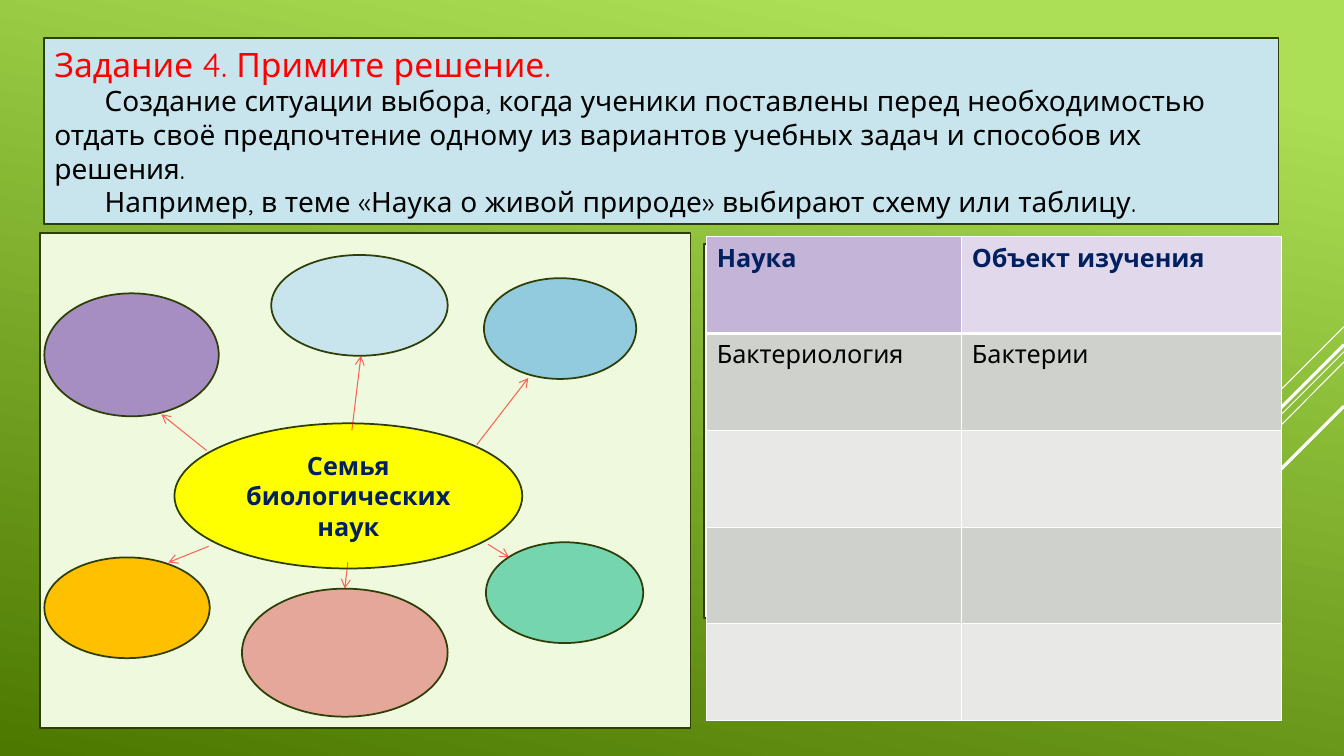
import pptx
import pptx.util
import pptx.dml.color
import pptx.enum.shapes
import pptx.enum.text
import pptx.oxml.ns
import lxml.etree

Inches = pptx.util.Inches
Pt = pptx.util.Pt
RGB = pptx.dml.color.RGBColor
MSO = pptx.enum.shapes.MSO_SHAPE
ALIGN = pptx.enum.text.PP_ALIGN
ANCHOR = pptx.enum.text.MSO_ANCHOR
qn = pptx.oxml.ns.qn

WHITE = RGB(0xFF, 0xFF, 0xFF)
BLACK = RGB(0x00, 0x00, 0x00)
RED = RGB(0xFF, 0x00, 0x00)
NAVY = RGB(0x00, 0x20, 0x60)
OUTLINE = RGB(0x2E, 0x3E, 0x07)
LIME = RGB(0xAC, 0xDF, 0x55)
DARK_GREEN = RGB(0x4C, 0x78, 0x00)
PALE_BLUE = RGB(0xC8, 0xE5, 0xEE)
PALE_GREEN = RGB(0xEE, 0xF9, 0xDD)
PURPLE = RGB(0xA6, 0x8E, 0xC3)
MINT = RGB(0x75, 0xD5, 0xAE)
SKY = RGB(0x91, 0xCB, 0xDD)
ORANGE = RGB(0xFF, 0xC0, 0x00)
YELLOW = RGB(0xFF, 0xFF, 0x00)
PINK = RGB(0xE5, 0xA7, 0x99)
LILAC = RGB(0xC4, 0xB4, 0xD7)
PALE_LILAC = RGB(0xE1, 0xD9, 0xEB)
GREY = RGB(0xCE, 0xD1, 0xCC)
PALE_GREY = RGB(0xE8, 0xE9, 0xE7)

prs = pptx.Presentation()
prs.slide_width = Inches(13.33)
prs.slide_height = Inches(7.5)
s = prs.slides.add_slide(prs.slide_layouts[6])

bg = s.background.fill
bg.gradient()
bg.gradient_angle = 258
for stop, position, color in zip(bg.gradient_stops, (0.1, 1), (LIME, DARK_GREEN)):
    stop.position = position
    stop.color.rgb = color


def add_line(x1, y1, x2, y2, color, width):
    ln = s.shapes.add_connector(
        pptx.enum.shapes.MSO_CONNECTOR.STRAIGHT,
        Inches(x1), Inches(y1), Inches(x2), Inches(y2))
    ln.line.color.rgb = color
    ln.line.width = Pt(width)
    lxml.etree.SubElement(ln._element.spPr, qn("a:effectLst"))
    return ln


def add_run(p, text, size, color, bold=False):
    r = p.add_run()
    r.text = text
    r.font.name = "Quicksand"
    r.font.size = Pt(size)
    r.font.bold = bold
    r.font.color.rgb = color


for y1, x2, y2, width in [
    (3.24, 12.33, 4.24, 0.75),
    (3.49, 10.07, 6.75, 0.75),
    (3.59, 11.26, 5.67, 0.75),
    (3.42, 11.42, 5.33, 2.25),
    (4.03, 11.94, 5.42, 2.25),
]:
    add_line(13.33, y1, x2, y2, WHITE, width)

task = [
    ("Задание 4. Примите решение.", 24, RED, 0),
    ("Создание ситуации выбора, когда ученики поставлены перед необходимостью "
     "отдать своё предпочтение одному из вариантов учебных задач и способов их решения.",
     20, BLACK, 0.5),
    ("Например, в теме «Наука о живой природе» выбирают схему или таблицу.",
     20, BLACK, 0.5),
]
center = [("Семья биологических наук", 18, NAVY, 0)]

for kind, x, y, w, h, color, lines in [
    (MSO.RECTANGLE, 0.44, 0.38, 12.24, 1.84, PALE_BLUE, task),
    (MSO.RECTANGLE, 0.4, 2.31, 6.45, 4.91, PALE_GREEN, []),
    (MSO.RECTANGLE, 6.98, 2.42, 5.56, 3.71, PALE_GREEN, []),
    (MSO.OVAL, 0.44, 2.91, 1.73, 1.22, PURPLE, []),
    (MSO.OVAL, 4.82, 5.38, 1.56, 1, MINT, []),
    (MSO.OVAL, 4.8, 2.76, 1.51, 1, SKY, []),
    (MSO.OVAL, 0.44, 5.53, 1.64, 1, ORANGE, []),
    (MSO.OVAL, 2.69, 2.53, 1.75, 1, PALE_BLUE, []),
    (MSO.OVAL, 1.73, 4.2, 3.45, 1.44, YELLOW, center),
    (MSO.OVAL, 2.4, 5.84, 2.04, 1.27, PINK, []),
]:
    sp = s.shapes.add_shape(kind, Inches(x), Inches(y), Inches(w), Inches(h))
    sp.shadow.inherit = False
    sp.fill.solid()
    sp.fill.fore_color.rgb = color
    sp.line.color.rgb = OUTLINE
    sp.line.width = Pt(1.25)
    tf = sp.text_frame
    tf.word_wrap = True
    tf.vertical_anchor = ANCHOR.MIDDLE
    for i, (text, size, ink, indent) in enumerate(lines):
        p = tf.add_paragraph() if i else tf.paragraphs[0]
        p.alignment = ALIGN.CENTER if kind == MSO.OVAL else ALIGN.LEFT
        p._p.get_or_add_pPr().set("indent", str(Inches(indent)))
        add_run(p, text, size, ink, bold=kind == MSO.OVAL)

for x1, y1, x2, y2 in [
    (4.73, 4.41, 5.24, 3.75),
    (4.84, 5.4, 5.05, 5.53),
    (3.45, 5.58, 3.42, 5.84),
    (3.49, 4.27, 3.58, 3.53),
    (2.05, 4.47, 1.6, 4.11),
    (2.07, 5.42, 1.67, 5.58),
]:
    ln = add_line(x1, y1, x2, y2, RED, 0.75).line._get_or_add_ln()
    lxml.etree.SubElement(ln.find(".//" + qn("a:srgbClr")), qn("a:alpha"), val="60000")
    lxml.etree.SubElement(ln, qn("a:tailEnd"), type="arrow")

table = s.shapes.add_table(5, 2, Inches(7.01), Inches(2.35), Inches(5.7), Inches(4.8)).table
for column, width in zip(table.columns, (2.53, 3.17)):
    column.width = Inches(width)
texts = [("Наука", "Объект изучения"), ("Бактериология", "Бактерии")]
for i, row in enumerate(table.rows):
    row.height = Inches(0.96)
    for j, cell in enumerate(row.cells):
        tcPr = cell._tc.get_or_add_tcPr()
        for side in ("L", "R", "T", "B"):
            thick = (i, side) in [(0, "B"), (1, "T")]
            border = lxml.etree.SubElement(
                tcPr, qn("a:ln" + side), w=str(Pt(3 if thick else 1)))
            fill = lxml.etree.SubElement(border, qn("a:solidFill"))
            lxml.etree.SubElement(fill, qn("a:srgbClr"), val=str(WHITE))
        cell.fill.solid()
        if i == 0:
            cell.fill.fore_color.rgb = (LILAC, PALE_LILAC)[j]
        else:
            cell.fill.fore_color.rgb = GREY if i % 2 else PALE_GREY
        if i < len(texts):
            add_run(cell.text_frame.paragraphs[0], texts[i][j], 18,
                    BLACK if i else NAVY, bold=i == 0)

prs.save("out.pptx")
